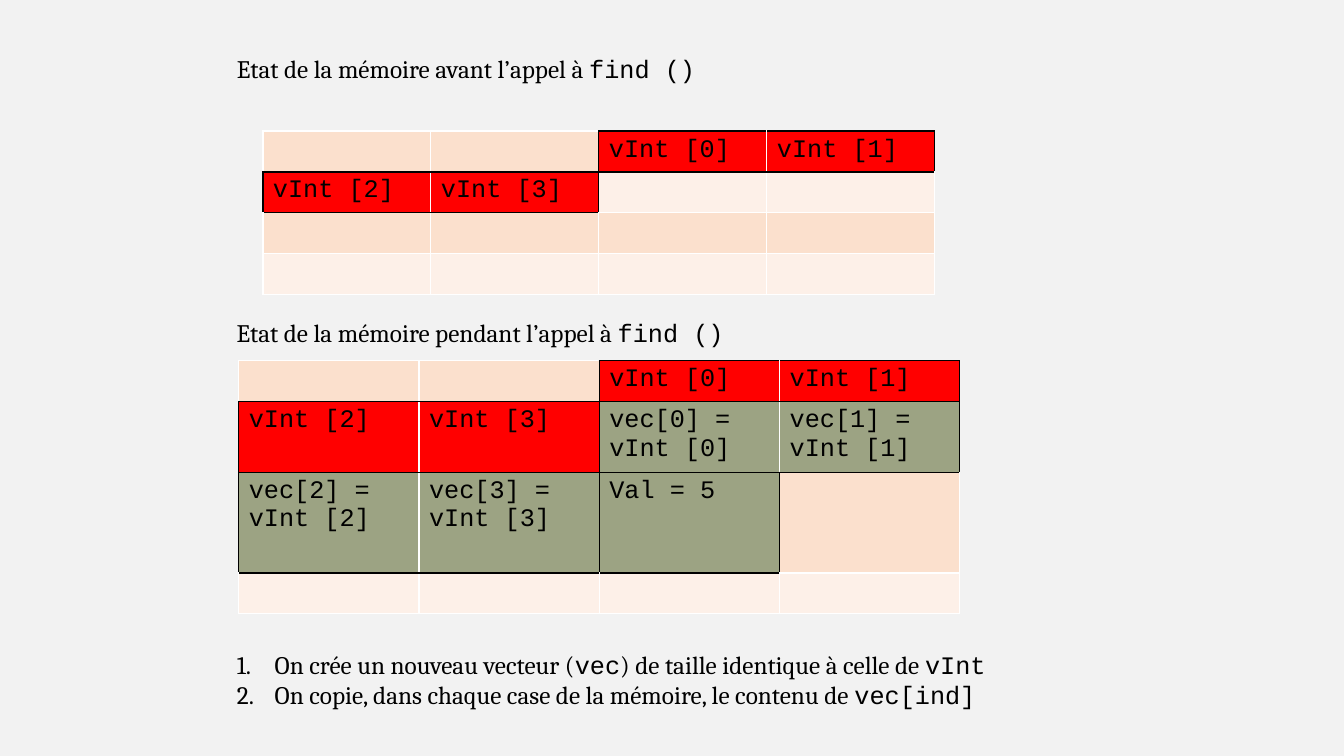
import pptx
import pptx.dml.color
import pptx.enum.text
import pptx.oxml
import pptx.oxml.ns
import pptx.util

Pt = pptx.util.Pt
RGBColor = pptx.dml.color.RGBColor

BLACK = RGBColor(0x00, 0x00, 0x00)
WHITE = RGBColor(0xFF, 0xFF, 0xFF)
PAPER = RGBColor(0xF2, 0xF2, 0xF2)
RED = RGBColor(0xFF, 0x00, 0x00)
GREEN = RGBColor(0x9C, 0xA3, 0x83)
BANDS = (RGBColor(0xFB, 0xE0, 0xCD), RGBColor(0xFD, 0xF0, 0xE8))

PROSE_FONT, CODE_FONT = "Cambria", "Courier New"
TEXT_SIZE = 18

# In each line, prose and code alternate, starting with prose.
BEFORE_HEADING = [("Etat de la mémoire avant l’appel à ", "find ()")]
DURING_HEADING = [("Etat de la mémoire pendant l’appel à ", "find ()")]
STEPS = [
    ("On crée un nouveau vecteur (", "vec", ") de taille identique à celle de ", "vInt"),
    ("On copie, dans chaque case de la mémoire, le contenu de ", "vec[ind]"),
]

MEMORY_BEFORE = [
    ["", "", "vInt [0]", "vInt [1]"],
    ["vInt [2]", "vInt [3]", "", ""],
    ["", "", "", ""],
    ["", "", "", ""],
]
MEMORY_DURING = [
    ["", "", "vInt [0]", "vInt [1]"],
    ["vInt [2]", "vInt [3]", "vec[0] = vInt [0]", "vec[1] = vInt [1]"],
    ["vec[2] = vInt [2]", "vec[3] = vInt [3]", "Val = 5", ""],
    ["", "", "", ""],
]

# left, top, width, height in points
BEFORE_HEADING_AREA = (162, 34.6, 505.4, 29)
DURING_HEADING_AREA = (162, 223.2, 505.4, 29)
STEPS_AREA = (162, 460, 608.4, 51)
LIST_INDENT = 27

ROW = 29.2
BEFORE_GRID = {"left": 187.8, "top": 93.6, "column": 120, "rows": [ROW] * 4}
DURING_GRID = {"left": 170.5, "top": 257.6, "column": 128.8, "rows": [ROW, 50, 72, ROW]}

SIDES = {"lnL": (0, -1), "lnR": (0, 1), "lnT": (-1, 0), "lnB": (1, 0)}


def write_lines(box, area, lines):
    box.left, box.top, box.width, box.height = map(Pt, area)
    frame = box.text_frame
    frame.word_wrap = True
    frame.auto_size = pptx.enum.text.MSO_AUTO_SIZE.SHAPE_TO_FIT_TEXT
    frame.vertical_anchor = pptx.enum.text.MSO_ANCHOR.TOP
    for number, spans in enumerate(lines):
        para = frame.add_paragraph() if number else frame.paragraphs[0]
        para.alignment = pptx.enum.text.PP_ALIGN.LEFT
        para.space_before = Pt(0)
        for position, words in enumerate(spans):
            span = para.add_run()
            span.text = words
            style_font(span.font, CODE_FONT if position % 2 else PROSE_FONT)


def style_font(font, name):
    font.name = name
    font.size = Pt(TEXT_SIZE)
    font.color.rgb = BLACK


def number_paragraphs(box):
    for para in box.text_frame.paragraphs:
        properties = para._p.get_or_add_pPr()
        properties.set("marL", str(Pt(LIST_INDENT)))
        properties.set("indent", str(-Pt(LIST_INDENT)))
        properties.append(pptx.oxml.parse_xml(
            f'<a:buFont {pptx.oxml.ns.nsdecls("a")} typeface="+mj-lt"/>'))
        properties.append(pptx.oxml.parse_xml(
            f'<a:buAutoNum {pptx.oxml.ns.nsdecls("a")} type="arabicPeriod"/>'))


def edge_color(memory, row, column, step):
    """Outline used cells in black, but keep white inside each pair of columns."""
    next_row, next_column = row + step[0], column + step[1]
    inside = 0 <= next_row < len(memory) and 0 <= next_column < len(memory[0])
    here = memory[row][column]
    there = memory[next_row][next_column] if inside else ""
    same_pair = row == next_row and inside and column // 2 == next_column // 2
    if same_pair and here and there:
        return WHITE
    return BLACK if here or there else WHITE


def add_edge(cell, side, color):
    cell._tc.get_or_add_tcPr().append(pptx.oxml.parse_xml(
        f'<a:{side} {pptx.oxml.ns.nsdecls("a")} w="{Pt(1)}"><a:solidFill>'
        f'<a:srgbClr val="{color}"/></a:solidFill></a:{side}>'))


def cell_color(words, row):
    if not words:
        return BANDS[row % 2]
    return RED if words.startswith("vInt") else GREEN


def add_memory(page, memory, grid):
    columns = len(memory[0])
    table = page.shapes.add_table(
        len(memory), columns, Pt(grid["left"]), Pt(grid["top"]),
        Pt(grid["column"] * columns), Pt(sum(grid["rows"]))).table
    table.first_row = table.horz_banding = False
    for column in table.columns:
        column.width = Pt(grid["column"])
    for row, height in enumerate(grid["rows"]):
        table.rows[row].height = Pt(height)
        for column, words in enumerate(memory[row]):
            cell = table.cell(row, column)
            for side, step in SIDES.items():
                add_edge(cell, side, edge_color(memory, row, column, step))
            cell.fill.solid()
            cell.fill.fore_color.rgb = cell_color(words, row)
            if words:
                cell.text_frame.text = words
                style_font(cell.text_frame.paragraphs[0].runs[0].font, CODE_FONT)


def main():
    deck = pptx.Presentation()
    deck.slide_width, deck.slide_height = Pt(960), Pt(540)
    page = deck.slides.add_slide(deck.slide_layouts.get_by_name("Title and Content"))
    page.background.fill.solid()
    page.background.fill.fore_color.rgb = PAPER

    write_lines(page.shapes.title, BEFORE_HEADING_AREA, BEFORE_HEADING)
    add_memory(page, MEMORY_BEFORE, BEFORE_GRID)

    during_heading = page.shapes.add_textbox(*map(Pt, DURING_HEADING_AREA))
    write_lines(during_heading, DURING_HEADING_AREA, DURING_HEADING)
    add_memory(page, MEMORY_DURING, DURING_GRID)

    steps = page.placeholders[1]
    write_lines(steps, STEPS_AREA, STEPS)
    number_paragraphs(steps)

    deck.save("out.pptx")


if __name__ == "__main__":
    main()
